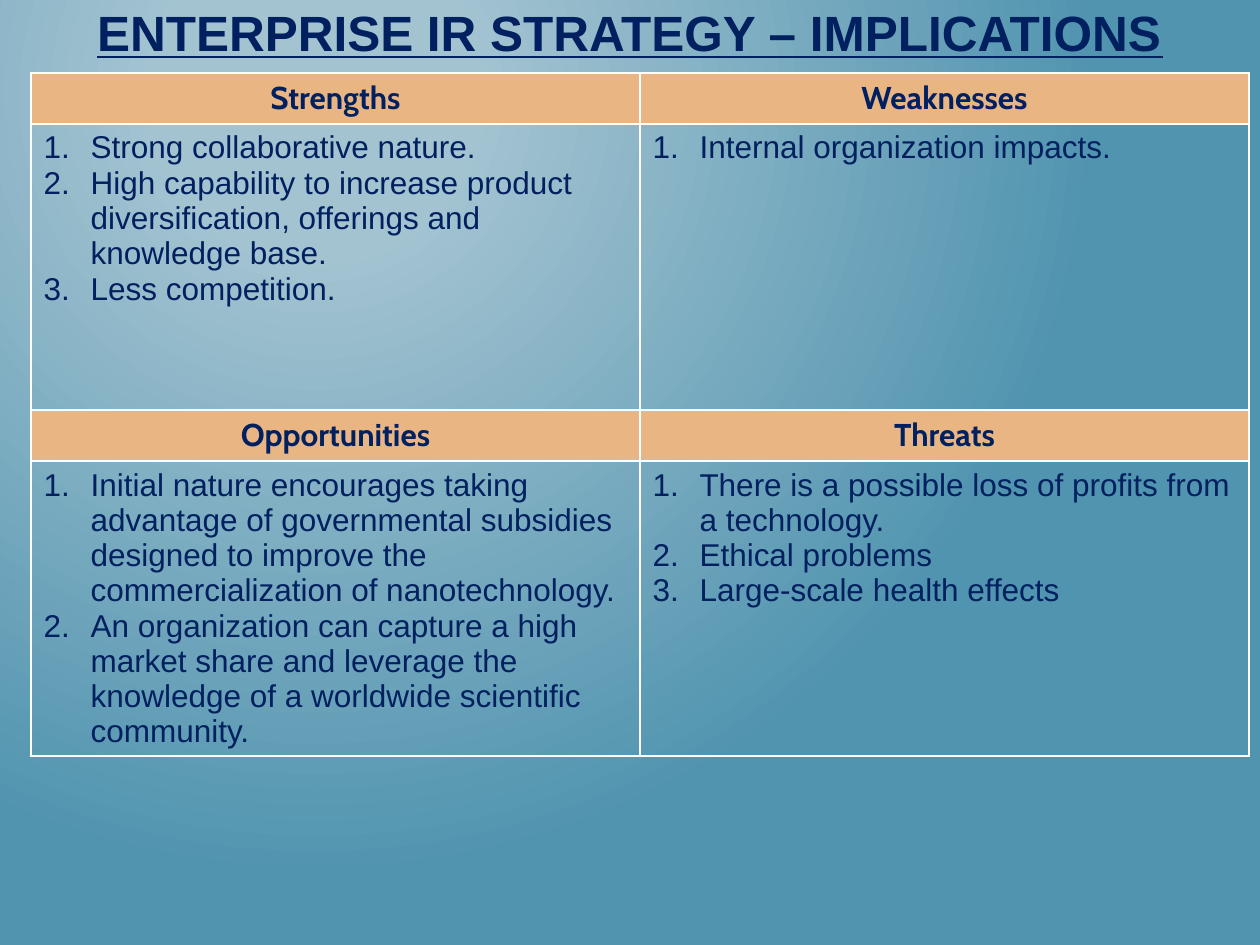
import pptx
import pptx.util
import pptx.dml.color
import pptx.enum.text
import pptx.oxml
import pptx.oxml.ns
from lxml import etree

RGB = pptx.dml.color.RGBColor
ALIGN = pptx.enum.text.PP_ALIGN
ANCHOR = pptx.enum.text.MSO_ANCHOR
qn = pptx.oxml.ns.qn

# Content
TITLE = "ENTERPRISE IR STRATEGY – IMPLICATIONS"
SWOT = [
    [("Strengths", [
        "Strong collaborative nature.",
        "High capability to increase product diversification, offerings and knowledge base.",
        "Less competition."]),
     ("Weaknesses", [
        "Internal organization impacts."])],
    [("Opportunities", [
        "Initial nature encourages taking advantage of governmental subsidies "
        "designed to improve the commercialization of nanotechnology.",
        "An organization can capture a high market share and leverage the "
        "knowledge of a worldwide scientific community."]),
     ("Threats", [
        "There is a possible loss of profits from a technology.",
        "Ethical problems",
        "Large-scale health effects"])],
]

# Colours and formats
NAVY = RGB(0x00, 0x20, 0x60)
ORANGE = RGB(0xE9, 0xB6, 0x83)
BACKDROP = [(0.2, RGB(0xA3, 0xC3, 0xD1)), (1.0, RGB(0x51, 0x94, 0xAF))]
BORDER = "FFFFFF"
TITLE_FONT = {"name": "Arial", "size": pptx.util.Pt(28.3), "bold": True, "underline": True}
HEAD_FONT = {"name": "Cabin", "size": pptx.util.Pt(18), "bold": True}
ITEM_FONT = {"name": "Arial", "size": pptx.util.Pt(18), "bold": False}

# Geometry in px
TITLE_BOX = (21, -10, 1218, 84)
TABLE_LEFT, TABLE_TOP, COL_WIDTH = 31, 73, 609
ROW_HEIGHTS = [51, 286, 51, 295]
INDENT = 47


def px(n):
    return pptx.util.Emu(round(n * 914400 / 126))


def write(p, text, font):
    r = p.add_run()
    r.text = text
    for name, value in font.items():
        setattr(r.font, name, value)
    r.font.color.rgb = NAVY


def number(p):
    pPr = p._p.get_or_add_pPr()
    pPr.set("marL", str(px(INDENT)))
    pPr.set("indent", str(-px(INDENT)))
    etree.SubElement(pPr, qn("a:buFont")).set("typeface", "+mj-lt")
    etree.SubElement(pPr, qn("a:buAutoNum")).set("type", "arabicPeriod")


def outline(cell):
    tcPr = cell._tc.get_or_add_tcPr()
    for i, side in enumerate("LRTB"):
        tcPr.insert(i, pptx.oxml.parse_xml(
            f'<a:ln{side} {pptx.oxml.ns.nsdecls("a")} w="12700"><a:solidFill>'
            f'<a:srgbClr val="{BORDER}"/></a:solidFill></a:ln{side}>'))


prs = pptx.Presentation()
prs.slide_width, prs.slide_height = px(1260), px(945)
s = prs.slides.add_slide(prs.slide_layouts[5])

# Radial background
fill = s.background.fill
fill.gradient()
for stop, (position, colour) in zip(fill.gradient_stops, BACKDROP):
    stop.position, stop.color.rgb = position, colour
grad = next(s.element.iter(qn("a:gradFill")))
grad.replace(grad.find(qn("a:lin")), pptx.oxml.parse_xml(
    f'<a:path {pptx.oxml.ns.nsdecls("a")} path="circle">'
    '<a:fillToRect l="50000" t="20000" r="100000" b="100000"/></a:path>'))

# Title
title = s.shapes.title
title.left, title.top, title.width, title.height = map(px, TITLE_BOX)
title.text_frame.vertical_anchor = ANCHOR.MIDDLE
p = title.text_frame.paragraphs[0]
p.alignment = ALIGN.CENTER
write(p, TITLE, TITLE_FONT)

# Table: a heading row above a list row for each pair
table = s.shapes.add_table(len(ROW_HEIGHTS), 2, px(TABLE_LEFT), px(TABLE_TOP),
                           px(2 * COL_WIDTH), px(sum(ROW_HEIGHTS))).table
table.first_row = table.horz_banding = False
for col in table.columns:
    col.width = px(COL_WIDTH)
for row, height in zip(table.rows, ROW_HEIGHTS):
    row.height = px(height)

for i, pair in enumerate(SWOT):
    for j, (heading, items) in enumerate(pair):
        head, body = table.cell(2 * i, j), table.cell(2 * i + 1, j)
        head.fill.solid()
        head.fill.fore_color.rgb = ORANGE
        body.fill.background()
        outline(head)
        outline(body)
        p = head.text_frame.paragraphs[0]
        p.alignment = ALIGN.CENTER
        write(p, heading, HEAD_FONT)
        tf = body.text_frame
        for k, item in enumerate(items):
            p = tf.add_paragraph() if k else tf.paragraphs[0]
            number(p)
            write(p, item, ITEM_FONT)

prs.save("out.pptx")
